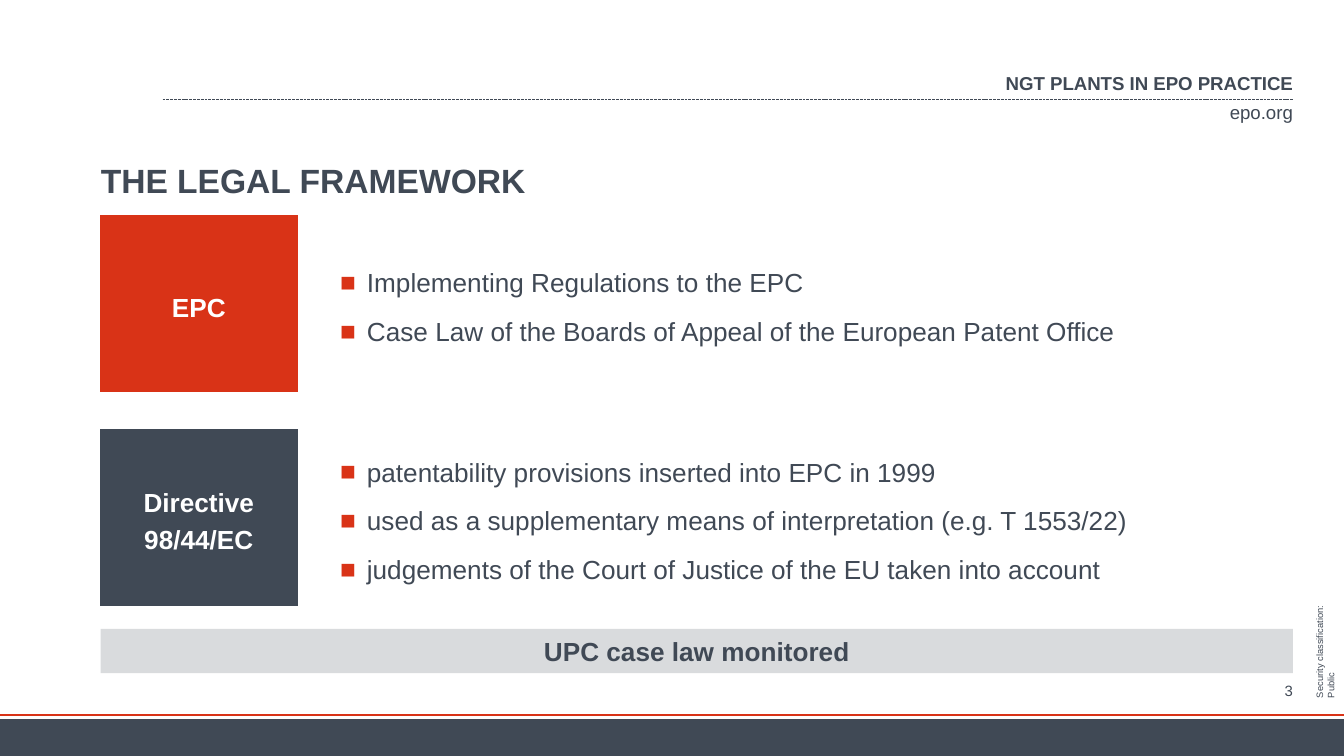
from lxml.etree import SubElement
from pptx import Presentation
from pptx.dml.color import RGBColor
from pptx.enum.dml import MSO_LINE_DASH_STYLE as Dash
from pptx.enum.shapes import MSO_CONNECTOR as Connector, MSO_SHAPE as Shape
from pptx.enum.text import MSO_ANCHOR as Anchor, MSO_AUTO_SIZE as AutoSize, PP_ALIGN as Align
from pptx.oxml.ns import qn
from pptx.util import Inches, Pt

WIDTH = 10
HEIGHT = WIDTH * 9 / 16
LEFT, RIGHT = 0.75, 9.62
CONTENT_WIDTH = RIGHT - LEFT
ROW_TOP, ROW_STEP, ROW_HEIGHT = 1.61, 1.59, 1.3
LABEL_WIDTH = 1.46
LIST_LEFT, LIST_WIDTH = 2.45, 7.18
RULE_Y = 0.74
FOOTER_TOP = 5.35
FONT = "Arial"

SLATE = RGBColor(0x40, 0x49, 0x55)
RED = RGBColor(0xD9, 0x33, 0x17)
GREY = RGBColor(0xD9, 0xDB, 0xDD)
WHITE = RGBColor(0xFF, 0xFF, 0xFF)

ROWS = [
    ("EPC", RED, [
        "Implementing Regulations to the EPC",
        "Case Law of the Boards of Appeal of the European Patent Office",
    ]),
    ("Directive 98/44/EC", SLATE, [
        "patentability provisions inserted into EPC in 1999",
        "used as a supplementary means of interpretation (e.g. T 1553/22)",
        "judgements of the Court of Justice of the EU taken into account",
    ]),
]


def place(shape, left, top, width, height):
    shape.left, shape.top = Inches(left), Inches(top)
    shape.width, shape.height = Inches(width), Inches(height)


def set_frame(frame, anchor, margins=(0, 0, 0, 0)):
    frame.auto_size = AutoSize.NONE
    frame.word_wrap = True
    frame.vertical_anchor = anchor
    (frame.margin_left, frame.margin_top,
     frame.margin_right, frame.margin_bottom) = map(Inches, margins)


def style(para, size, color=SLATE, bold=False, align=Align.LEFT):
    para.alignment = align
    for span in para.runs:
        span.font.name = FONT
        span.font.size = Pt(size)
        span.font.bold = bold
        span.font.color.rgb = color


def add_text(page, text, area, size, bold=False, align=Align.RIGHT, anchor=Anchor.MIDDLE):
    box = page.shapes.add_textbox(*map(Inches, area))
    set_frame(box.text_frame, anchor)
    box.text_frame.text = text
    style(box.text_frame.paragraphs[0], size, bold=bold, align=align)
    return box


def add_block(page, area, fill, text="", color=WHITE, outlined=False, spacing=1.0):
    block = page.shapes.add_shape(Shape.RECTANGLE, *map(Inches, area))
    block.shadow.inherit = False
    block.fill.solid()
    block.fill.fore_color.rgb = fill
    if outlined:
        block.line.color.rgb = fill
        block.line.width = Pt(1)
        SubElement(block.line._get_or_add_ln(), qn("a:miter"), lim="800000")
    else:
        block.line.fill.background()
    if text:
        set_frame(block.text_frame, Anchor.MIDDLE, (0.1, 0.05, 0.1, 0.05))
        block.text_frame.text = text
        para = block.text_frame.paragraphs[0]
        para.line_spacing = spacing
        style(para, 14, color, True, Align.CENTER)


def add_rule(page, left, right, y, color, width, dash=None):
    rule = page.shapes.add_connector(Connector.STRAIGHT, *map(Inches, (left, y, right, y)))
    rule.line.color.rgb = color
    rule.line.width = Pt(width)
    if dash:
        rule.line.dash_style = dash
    SubElement(rule.element.spPr, qn("a:effectLst"))


def set_title(page, text):
    title = page.shapes.title
    place(title, LEFT, 0.88, CONTENT_WIDTH, 0.61)
    set_frame(title.text_frame, Anchor.BOTTOM)
    title.text_frame.text = text
    style(title.text_frame.paragraphs[0], 18, bold=True)


def add_bullet(para):
    props = para._p.get_or_add_pPr()
    props.set("marL", str(Inches(0.2)))
    props.set("indent", str(Inches(-0.2)))
    color = SubElement(props, qn("a:buClr"))
    SubElement(color, qn("a:srgbClr"), val=str(RED))
    SubElement(props, qn("a:buFont"), typeface=FONT)
    SubElement(props, qn("a:buChar"), char="■")


def fill_list(body, top, items):
    place(body, LIST_LEFT, top, LIST_WIDTH, ROW_HEIGHT)
    frame = body.text_frame
    set_frame(frame, Anchor.MIDDLE, (0.08, 0.04, 0.04, 0.04))
    frame.text = "\n".join(items)
    for index, para in enumerate(frame.paragraphs):
        add_bullet(para)
        para.line_spacing = 1.2
        para.space_before = Pt(6 if index else 0)
        style(para, 14)


def add_header(page):
    add_text(page, "NGT PLANTS IN EPO PRACTICE", (3.72, 0.53, RIGHT - 3.72, 0.18), 10, bold=True)
    add_rule(page, 1.21, RIGHT, RULE_Y, SLATE, 0.5, Dash.SQUARE_DOT)
    add_text(page, "epo.org", (9.15, 0.75, RIGHT - 9.15, 0.17), 10)


def add_footer(page):
    add_block(page, (0, FOOTER_TOP, WIDTH, HEIGHT - FOOTER_TOP), SLATE)
    add_rule(page, 0, WIDTH, 5.32, RED, 1.5)
    add_text(page, "3", (9.03, 5.07, RIGHT - 9.03, 0.13), 8)
    notice = add_text(page, "Security classification: Public", (9.44, 4.78, 0.75, 0.08), 5,
                      align=Align.LEFT, anchor=Anchor.TOP)
    notice.rotation = 270


def main():
    deck = Presentation()
    deck.slide_width, deck.slide_height = Inches(WIDTH), Inches(HEIGHT)
    page = deck.slides.add_slide(deck.slide_layouts[3])
    add_header(page)
    add_footer(page)
    set_title(page, "THE LEGAL FRAMEWORK")
    bodies = list(page.placeholders)[1:]
    for index, (body, (label, color, items)) in enumerate(zip(bodies, ROWS)):
        top = ROW_TOP + index * ROW_STEP
        add_block(page, (LEFT, top, LABEL_WIDTH, ROW_HEIGHT), color, label,
                  outlined=True, spacing=1.2)
        fill_list(body, top, items)
    add_block(page, (LEFT, 4.68, CONTENT_WIDTH, 0.33), GREY, "UPC case law monitored", SLATE)
    deck.save("out.pptx")


if __name__ == "__main__":
    main()
